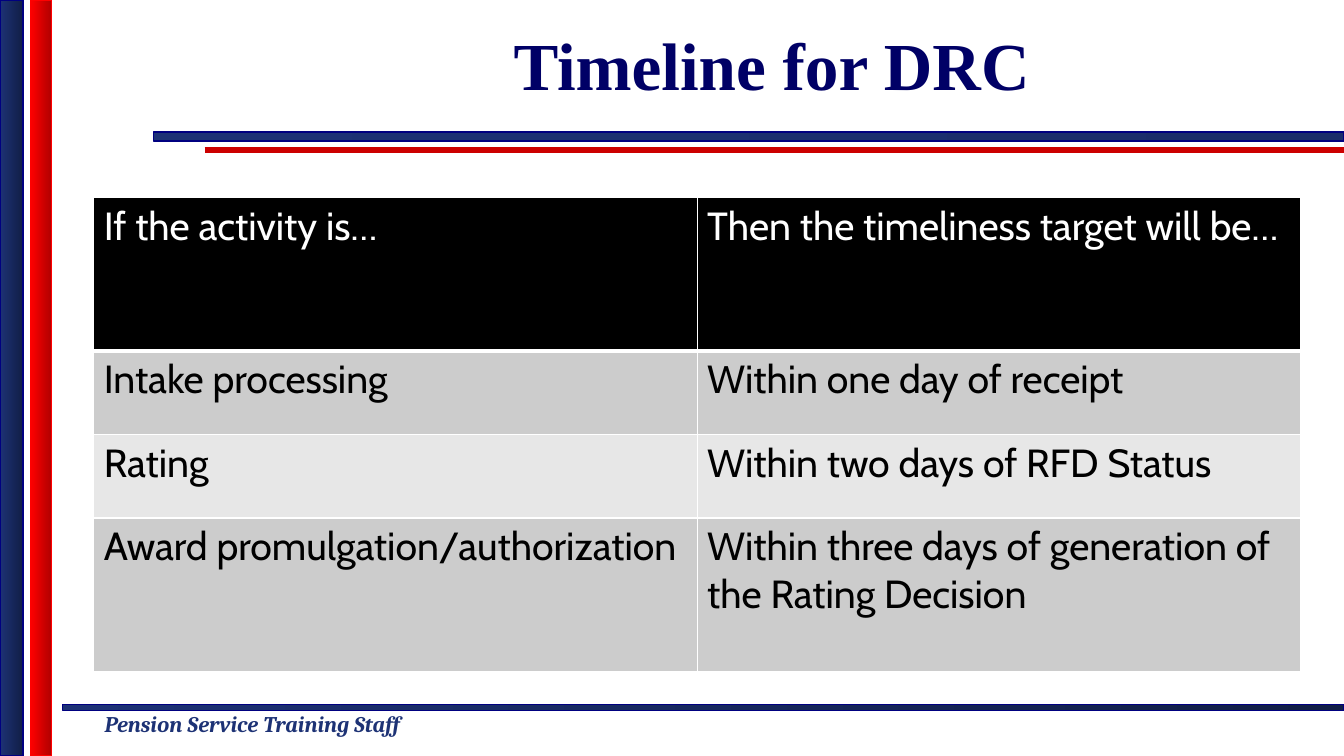
from lxml.etree import SubElement
from pptx import Presentation
from pptx.dml.color import RGBColor as RGB
from pptx.enum.shapes import MSO_CONNECTOR as LINE, MSO_SHAPE as SHAPE
from pptx.enum.text import MSO_ANCHOR as ANCHOR, PP_ALIGN as ALIGN
from pptx.oxml.ns import qn
from pptx.util import Inches, Pt

WIDE, HIGH = 13.33, 7.5
WHITE = RGB(0xFF, 0xFF, 0xFF)
BLACK = RGB(0, 0, 0)
BLUE = RGB(0x1D, 0x32, 0x75)
DUSK = RGB(0x1A, 0x2D, 0x69)
NIGHT = RGB(0x11, 0x1E, 0x46)
NAVY = RGB(0, 0, 0x80)
INK = RGB(0, 0, 0x66)
RED = RGB(0xFF, 0, 0)
WINE = RGB(0xB2, 0, 0)
RULE = RGB(0xCC, 0, 0)
GRAY = RGB(0xCC, 0xCC, 0xCC)
PALE = RGB(0xE7, 0xE7, 0xE7)

ROWS = [
    ("If the activity is…", "Then the timeliness target will be…"),
    ("Intake processing", "Within one day of receipt"),
    ("Rating", "Within two days of RFD Status"),
    ("Award promulgation/authorization",
     "Within three days of generation of the Rating Decision"),
]
TALL = [1.52, 0.83, 0.83, 1.52]


def add_bar(slide, box, start, end, edge):
    bar = slide.shapes.add_shape(SHAPE.RECTANGLE, *map(Inches, box))
    bar.shadow.inherit = False
    bar.fill.gradient()
    bar.fill.gradient_angle = 0
    for stop, color in zip(bar.fill.gradient_stops, (start, end)):
        stop.color.rgb = color
    bar.line.color.rgb = edge
    bar.line.width = Pt(1)


def add_frame(slide):
    # Red rule under the title
    rule = slide.shapes.add_connector(
        LINE.STRAIGHT, Inches(2.03), Inches(1.49), Inches(WIDE), Inches(1.49))
    rule.line.color.rgb = RULE
    rule.line.width = Pt(4)
    SubElement(rule._element.spPr, qn("a:effectLst"))

    # Bars at the foot, under the title and down the left side
    add_bar(slide, (0.62, 6.99, WIDE - 0.62, 0.06), BLUE, NIGHT, NAVY)
    add_bar(slide, (1.52, 1.31, WIDE - 1.52, 0.09), BLUE, DUSK, NAVY)
    add_bar(slide, (0, 0, 0.23, HIGH), BLUE, NIGHT, NAVY)
    add_bar(slide, (0.3, 0, 0.21, HIGH), RED, WINE, RED)


def add_run(para, text, font, size, color, bold=False, italic=False):
    run = para.add_run()
    run.text = text
    run.font.name = font
    run.font.size = Pt(size)
    run.font.color.rgb = color
    run.font.bold = bold
    run.font.italic = italic


def add_title(slide, box):
    frame = slide.shapes.add_textbox(*map(Inches, box)).text_frame
    frame.word_wrap = True
    frame.vertical_anchor = ANCHOR.MIDDLE
    para = frame.paragraphs[0]
    para.alignment = ALIGN.CENTER
    add_run(para, "Timeline for DRC", "Times New Roman", 48, INK, bold=True)


def add_footer(slide, box):
    frame = slide.shapes.add_textbox(*map(Inches, box)).text_frame
    frame.word_wrap = False
    add_run(frame.paragraphs[0], "Pension Service Training Staff",
            "Cambria", 16, BLUE, bold=True, italic=True)


def set_edge(cell, side, width):
    props = cell._tc.get_or_add_tcPr()
    edge = SubElement(props, qn(f"a:{side}"), w=str(Pt(width)))
    fill = SubElement(edge, qn("a:solidFill"))
    SubElement(fill, qn("a:srgbClr"), val=str(WHITE))


def add_grid(slide, box):
    grid = slide.shapes.add_table(len(ROWS), 2, *map(Inches, box)).table
    for col in grid.columns:
        col.width = Inches(box[2] / 2)
    for r, texts in enumerate(ROWS):
        grid.rows[r].height = Inches(TALL[r])
        back = BLACK if r == 0 else GRAY if r % 2 else PALE
        for c, text in enumerate(texts):
            cell = grid.cell(r, c)
            # Borders come before the fill in the cell properties
            for side in ("lnL", "lnR", "lnT", "lnB"):
                heavy = (r, side) in ((0, "lnB"), (1, "lnT"))
                set_edge(cell, side, 3 if heavy else 1)
            cell.fill.solid()
            cell.fill.fore_color.rgb = back
            add_run(cell.text_frame.paragraphs[0], text, "Cabin", 28,
                    BLACK if r else WHITE)


def main():
    deck = Presentation()
    deck.slide_width, deck.slide_height = Inches(WIDE), Inches(HIGH)
    slide = deck.slides.add_slide(deck.slide_layouts[6])
    add_frame(slide)
    add_footer(slide, (0.94, 7, 3.77, 0.37))
    add_title(slide, (2.34, 0, 10.63, 1.26))
    add_grid(slide, (0.93, 1.96, 11.97, sum(TALL)))
    deck.save("out.pptx")


if __name__ == "__main__":
    main()
